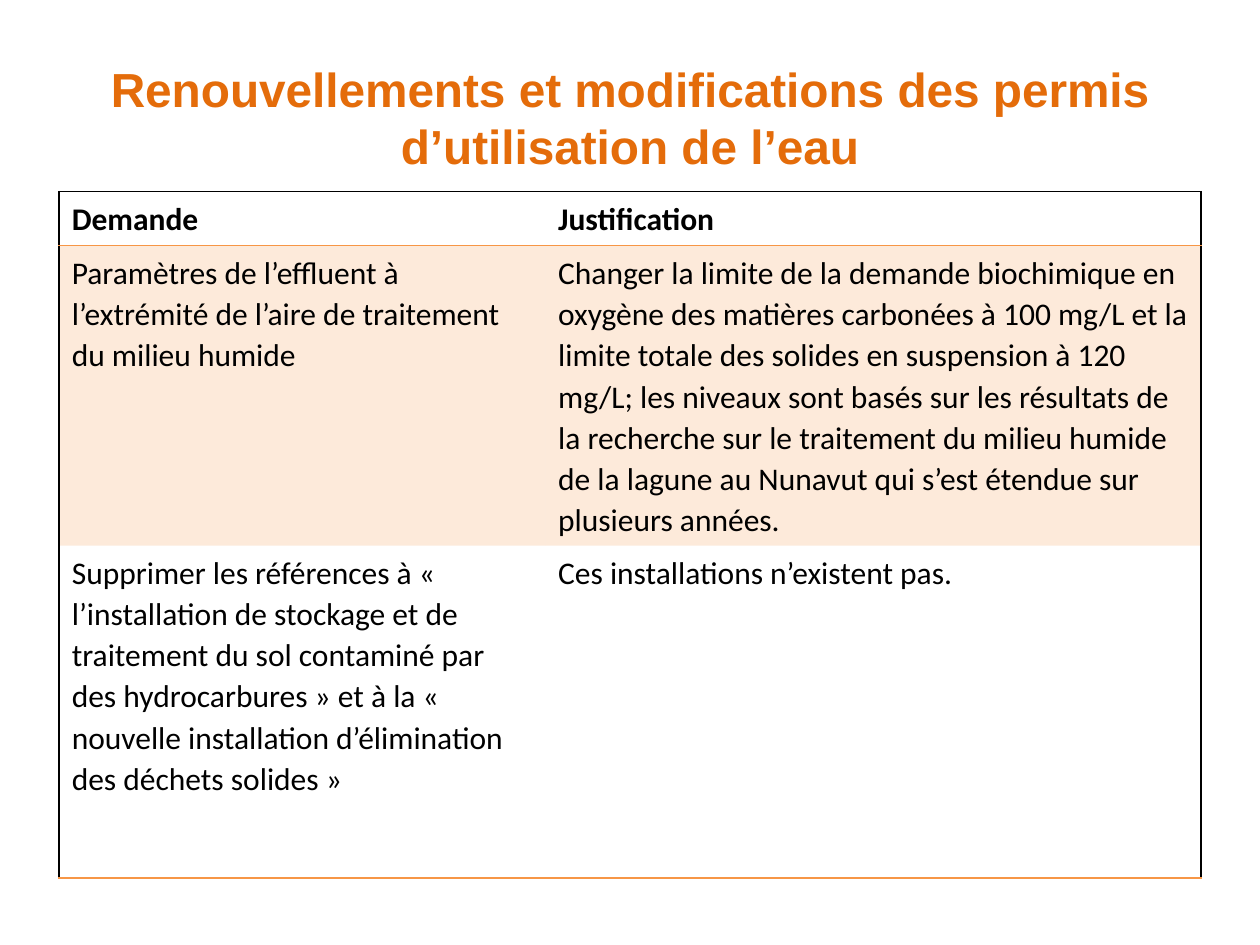
from lxml import etree
from pptx import Presentation
from pptx.dml.color import RGBColor
from pptx.enum import text as t
from pptx.oxml import parse_xml
from pptx.oxml.ns import qn, nsdecls
from pptx.util import Inches, Pt

BLACK, ORANGE = "000000", "F79646"


def style(par, size, face, color, bold):
    font = par.font
    for run in par.runs:
        font = run.font
        font.size, font.name, font.bold = Pt(size), face, bold
        font.color.rgb = RGBColor.from_string(color)


def edge(cell, side, color):
    cell._tc.get_or_add_tcPr().append(parse_xml(
        f'<a:ln{side} {nsdecls("a")} w="12700"><a:solidFill>'
        f'<a:srgbClr val="{color}"/></a:solidFill></a:ln{side}>'))


prs = Presentation()
prs.slide_width, prs.slide_height = Inches(10), Inches(7.5)
slide = prs.slides.add_slide(prs.slide_layouts[6])

# Title
box = slide.shapes.add_textbox(Inches(0), Inches(0.3), Inches(10), Inches(1.25))
frame = box.text_frame
frame.word_wrap = True
frame.vertical_anchor = t.MSO_ANCHOR.MIDDLE
frame.text = "Renouvellements et modifications des permis d’utilisation de l’eau"
head = frame.paragraphs[0]
head.alignment = t.PP_ALIGN.CENTER
style(head, 27.3, "Arial", "E46C0A", True)

# Table
rows = [
    ("Demande", "Justification"),
    ("Paramètres de l’effluent à l’extrémité de l’aire de traitement "
     "du milieu humide",
     "Changer la limite de la demande biochimique en oxygène des matières "
     "carbonées à 100 mg/L et la limite totale des solides en suspension à "
     "120 mg/L; les niveaux sont basés sur les résultats de la recherche sur "
     "le traitement du milieu humide de la lagune au Nunavut qui s’est "
     "étendue sur plusieurs années."),
    ("Supprimer les références à « l’installation de stockage et de "
     "traitement du sol contaminé par des hydrocarbures » et à la "
     "« nouvelle installation d’élimination des déchets solides »",
     "Ces installations n’existent pas."),
]
widths, heights = [3.86, 5.2], [0.43, 2.38, 2.64]
grid = slide.shapes.add_table(
    3, 2, Inches(0.47), Inches(1.52),
    Inches(sum(widths)), Inches(sum(heights))).table
grid.first_row = grid.horz_banding = False
# Plain style without grid lines
grid._tbl.tblPr.find(qn("a:tableStyleId")).text = \
    "{2D5ABB26-0587-4C30-8999-92F81FD0307C}"
for col, wide in zip(grid.columns, widths):
    col.width = Inches(wide)

for i, (words, high) in enumerate(zip(rows, heights)):
    grid.rows[i].height = Inches(high)
    for j, word in enumerate(words):
        cell = grid.cell(i, j)
        cell.text = word
        par = cell.text_frame.paragraphs[0]
        par.line_spacing, par.space_after = 1.07, Pt(8)
        style(par, 18, "Calibri", BLACK, i == 0)

        # Outer frame, with orange rules under the header and the last row
        edge(cell, "R" if j else "L", BLACK)
        if i == 0:
            edge(cell, "T", BLACK)
        if i != 1:
            edge(cell, "B", ORANGE)

        # Tinted middle row
        if i == 1:
            cell.fill.solid()
            cell.fill.fore_color.rgb = RGBColor.from_string(ORANGE)
            tint = cell._tc.tcPr.find(qn("a:solidFill"))[0]
            etree.SubElement(tint, qn("a:alpha"), val="20000")
        else:
            cell.fill.background()

prs.save("out.pptx")
